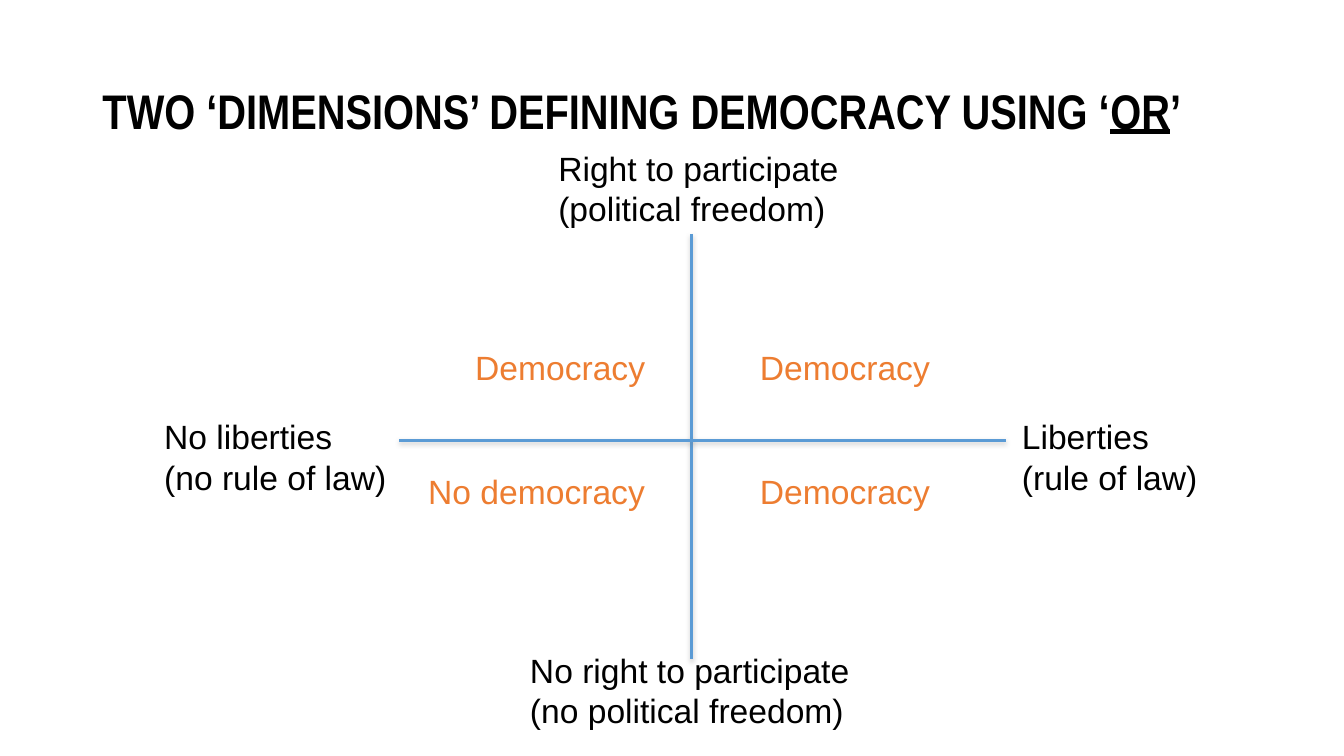
from lxml import etree
from pptx import Presentation
from pptx.dml.color import RGBColor
from pptx.enum.shapes import MSO_CONNECTOR
from pptx.enum.text import MSO_ANCHOR, MSO_AUTO_SIZE, PP_ALIGN
from pptx.oxml.ns import qn
from pptx.util import Pt

STRAIGHT = MSO_CONNECTOR.STRAIGHT
MIDDLE = MSO_ANCHOR.MIDDLE
LEFT = PP_ALIGN.LEFT
NO_AUTOFIT = MSO_AUTO_SIZE.NONE
BLACK, ORANGE, BLUE, GRAY = "000000", "ED7D31", "5B9BD5", "808080"


def color(hex_string):
    return RGBColor.from_string(hex_string)


def add_run(paragraph, text, font_name, size, hex_string):
    run = paragraph.add_run()
    run.text = text
    run.font.name = font_name
    run.font.size = Pt(size)
    run.font.color.rgb = color(hex_string)
    return run


prs = Presentation()
prs.slide_width, prs.slide_height = Pt(960), Pt(540)
slide = prs.slides.add_slide(prs.slide_layouts[5])

# Title
title = slide.shapes.title
title.left, title.top, title.width, title.height = Pt(66), Pt(28.75), Pt(828), Pt(104.4)
title.text_frame.auto_size = NO_AUTOFIT
title.text_frame.word_wrap = True
title.text_frame.vertical_anchor = MIDDLE
heading = title.text_frame.paragraphs[0]
heading.alignment = LEFT
heading.line_spacing = 0.9
for text, underlined in [
    ("TWO ‘DIMENSIONS’ DEFINING DEMOCRACY USING ‘", False),
    ("OR", True),
    ("’", False),
]:
    run = add_run(heading, text, "Arial Narrow", 34.7, BLACK)
    run.font.bold = True
    run.font.underline = underlined

# Axes with a soft shadow below
CENTER_X, CENTER_Y = 493.9, 314.6
for x1, y1, x2, y2 in [
    (CENTER_X, 167, CENTER_X, 470.9),
    (285.1, CENTER_Y, 718.6, CENTER_Y),
]:
    axis = slide.shapes.add_connector(STRAIGHT, Pt(x1), Pt(y1), Pt(x2), Pt(y2))
    axis.line.color.rgb = color(BLUE)
    axis.line.width = Pt(2)
    effects = etree.SubElement(axis._element.spPr, qn("a:effectLst"))
    shadow = etree.SubElement(effects, qn("a:outerShdw"), blurRad=str(Pt(3.1)),
                              dist=str(Pt(1.6)), dir="5400000", rotWithShape="0")
    shadow_color = etree.SubElement(shadow, qn("a:srgbClr"), val=GRAY)
    etree.SubElement(shadow_color, qn("a:alpha"), val="38000")

# Axis ends and quadrants
UPPER, LOWER = 244.1, 332.6
RIGHT_QUADRANT = 535.7
labels = [
    (371.5, 460.8, 244.8, BLACK, ["No right to participate", "(no political freedom)"]),
    (391.7, 102.2, 216.7, BLACK, ["Right to participate", "(political freedom)"]),
    (110.2, 293.8, 175, BLACK, ["No liberties", "(no rule of law)"]),
    (722.9, 293.8, 141.1, BLACK, ["Liberties", "(rule of law)"]),
    (RIGHT_QUADRANT, UPPER, 137.5, ORANGE, ["Democracy"]),
    (298.8, LOWER, 170.6, ORANGE, ["No democracy"]),
    (332.3, UPPER, 137.5, ORANGE, ["Democracy"]),
    (RIGHT_QUADRANT, LOWER, 137.5, ORANGE, ["Democracy"]),
]
for left, top, width, text_color, lines in labels:
    height = 7.2 + 28.8 * len(lines)
    label = slide.shapes.add_textbox(Pt(left), Pt(top), Pt(width), Pt(height))
    frame = label.text_frame
    frame.word_wrap = False
    for index, line in enumerate(lines):
        paragraph = frame.add_paragraph() if index else frame.paragraphs[0]
        add_run(paragraph, line, "Arial", 24, text_color)

prs.save("out.pptx")
